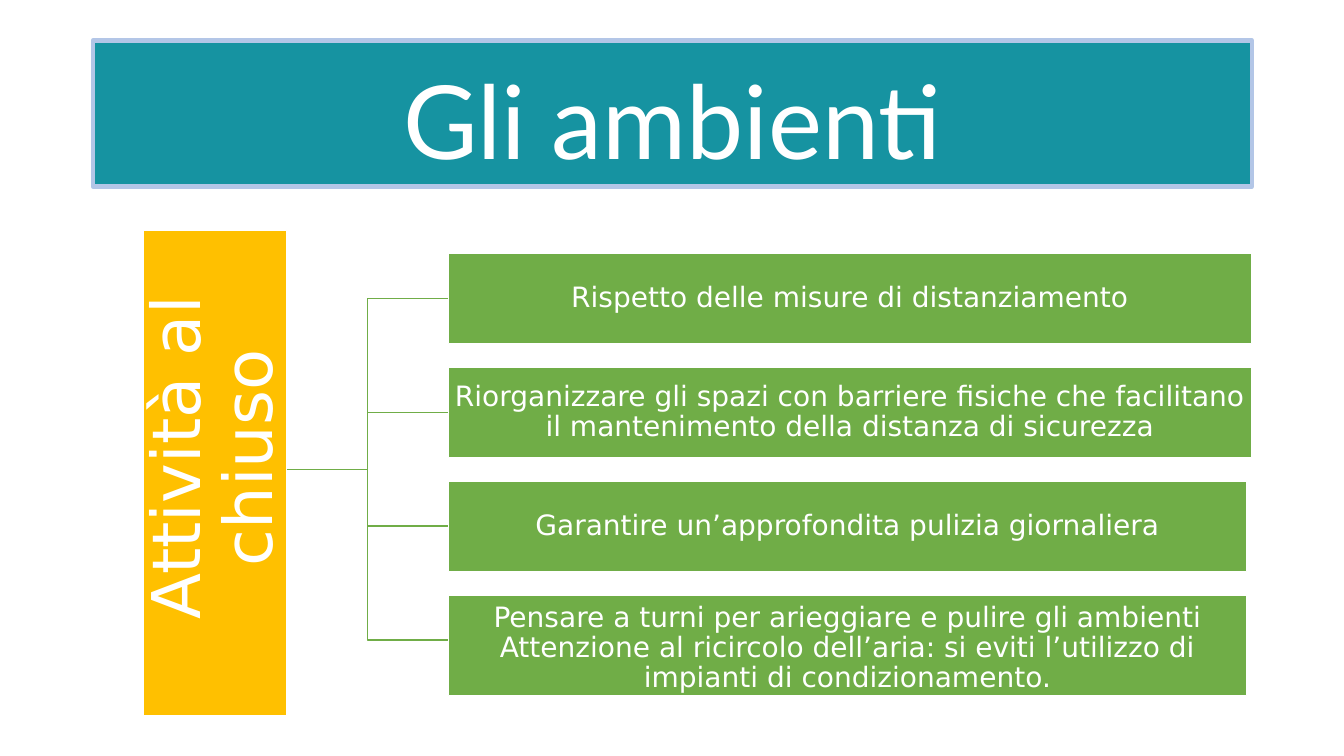
import pptx
import pptx.dml.color
import pptx.enum.shapes
import pptx.enum.text
import pptx.util

Cm = pptx.util.Cm

TITLE = "Gli ambienti"
ROOT = "Attività al chiuso"
# lines of text, box width, box height, (left, top, right, bottom) margins; in cm
MEASURES = [
    (["Rispetto delle misure di distanziamento"], 20.24, 2.28, (0.05,) * 4),
    (["Riorganizzare gli spazi con barriere fisiche che facilitano "
      "il mantenimento della distanza di sicurezza"], 20.24, 2.28, (0.05,) * 4),
    (["Garantire un’approfondita pulizia giornaliera"], 20.12, 2.28, (0.05,) * 4),
    (["Pensare a turni per arieggiare e pulire gli ambienti",
      "Attenzione al ricircolo dell’aria: si eviti l’utilizzo di "
      "impianti di condizionamento."], 20.12, 2.54, (0.15, 0.18, 0.15, 0.03)),
]
COLORS = {"teal": "1693A1", "light_blue": "B3C6E7", "green": "70AD47",
          "amber": "FFC000", "white": "FFFFFF"}

TITLE_BOX = (2.34, 1.02, 29.21, 3.68)
ROOT_CENTER = (5.41, 11.91)
ROOT_LENGTH, ROOT_THICKNESS = 12.24, 3.61
TRUNK_LEFT, TRUNK_RIGHT, TRUNK_Y = 7.21, 9.26, 11.83
BOX_LEFT, FIRST_TOP, BOX_STEP, BRANCH_DROP = 11.3, 6.38, 2.87, 1.14


def color(name):
    return pptx.dml.color.RGBColor.from_string(COLORS[name])


def set_attributes(target, values):
    for name, value in values.items():
        setattr(target, name, value)


def paint(shape, fill, line, line_width):
    shape.fill.solid()
    shape.fill.fore_color.rgb = color(fill)
    shape.line.color.rgb = color(line)
    shape.line.width = pptx.util.Pt(line_width)


def write(shape, lines, font_name, size, margins, anchor):
    frame = shape.text_frame
    sides = ("margin_left", "margin_top", "margin_right", "margin_bottom")
    set_attributes(frame, {
        "text": "\n".join(lines), "word_wrap": True, "vertical_anchor": anchor,
        "auto_size": pptx.enum.text.MSO_AUTO_SIZE.NONE,
        **{side: Cm(margin) for side, margin in zip(sides, margins)}})
    for paragraph in frame.paragraphs:
        set_attributes(paragraph, {"alignment": pptx.enum.text.PP_ALIGN.CENTER,
                                   "line_spacing": 0.9, "space_before": 0})
        set_attributes(paragraph.font, {"name": font_name, "size": pptx.util.Pt(size)})
        paragraph.font.color.rgb = color("white")


def add_box(slide, position, fill, lines, size, margins):
    box = slide.shapes.add_shape(pptx.enum.shapes.MSO_SHAPE.RECTANGLE,
                                 *map(Cm, position))
    box.shadow.inherit = False
    paint(box, fill, "white", 1)
    write(box, lines, "DejaVu Sans", size, margins, pptx.enum.text.MSO_ANCHOR.MIDDLE)
    return box


def add_branch(slide, end_y):
    """Draw the stepped line from the root bar to a box."""
    builder = slide.shapes.build_freeform(Cm(TRUNK_LEFT), Cm(TRUNK_Y))
    corners = [(TRUNK_RIGHT, TRUNK_Y), (TRUNK_RIGHT, end_y), (BOX_LEFT, end_y)]
    builder.add_line_segments([(Cm(x), Cm(y)) for x, y in corners], close=False)
    branch = builder.convert_to_shape()
    branch.shadow.inherit = False
    branch.fill.background()
    branch.line.color.rgb = color("green")
    branch.line.width = pptx.util.Pt(1)


def main():
    presentation = pptx.Presentation()
    set_attributes(presentation, {"slide_width": Cm(33.87), "slide_height": Cm(19.05)})
    slide = presentation.slides.add_slide(presentation.slide_layouts[5])

    title = slide.shapes.title
    set_attributes(title, dict(zip(("left", "top", "width", "height"),
                                   map(Cm, TITLE_BOX))))
    paint(title, "teal", "light_blue", 3)
    write(title, [TITLE], "Lato", 73, (0.25, 0.13, 0.25, 0.13),
          pptx.enum.text.MSO_ANCHOR.BOTTOM)

    tops = [FIRST_TOP + BOX_STEP * row for row in range(len(MEASURES))]
    for top in reversed(tops):
        add_branch(slide, top + BRANCH_DROP)

    center_x, center_y = ROOT_CENTER
    root = add_box(slide, (center_x - ROOT_LENGTH / 2, center_y - ROOT_THICKNESS / 2,
                           ROOT_LENGTH, ROOT_THICKNESS),
                   "amber", [ROOT], 48, (0.83, 0.08, 0.08, 0.08))
    root.rotation = 270

    for top, (lines, width, height, margins) in zip(tops, MEASURES):
        add_box(slide, (BOX_LEFT, top, width, height), "green", lines, 20, margins)

    presentation.save("out.pptx")


if __name__ == "__main__":
    main()
